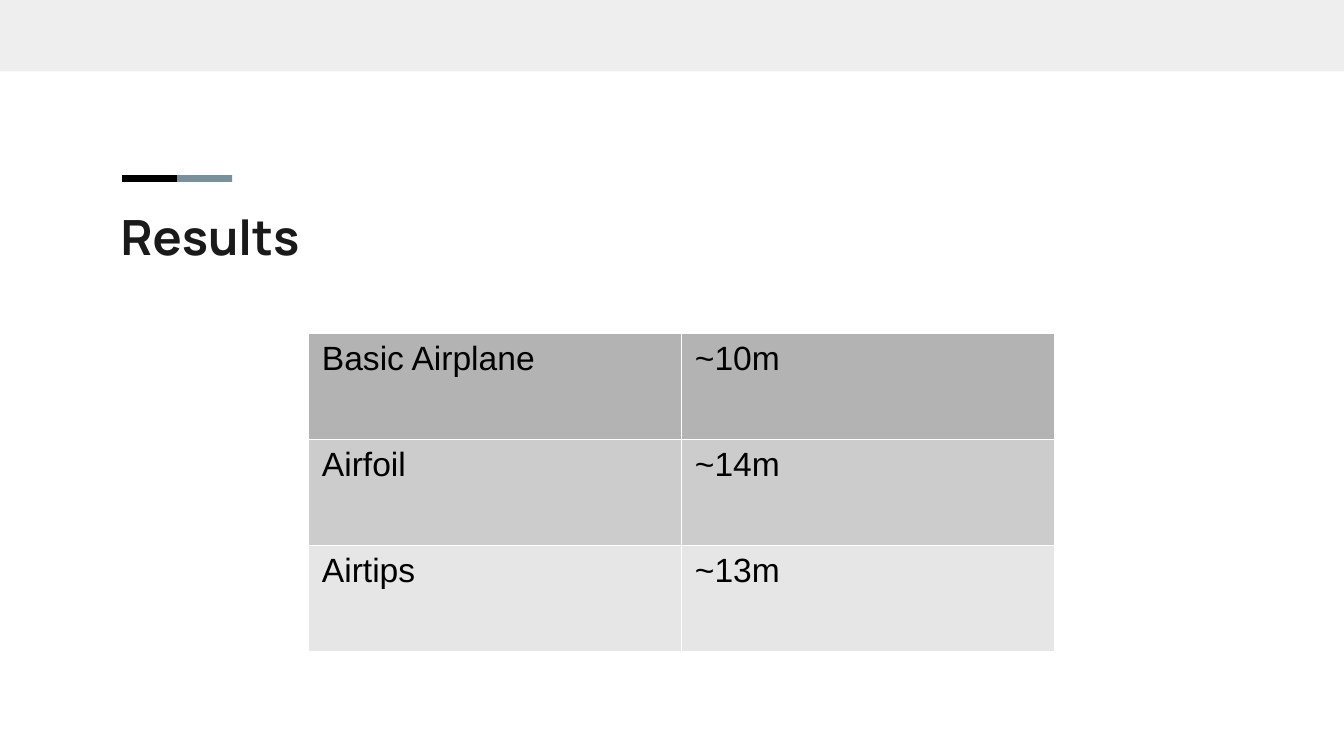
from lxml import etree
from pptx import Presentation
from pptx.dml.color import RGBColor
from pptx.enum.shapes import MSO_SHAPE
from pptx.enum.text import MSO_ANCHOR
from pptx.oxml.ns import qn
from pptx.util import Cm, Pt

RECT = MSO_SHAPE.RECTANGLE
TOP = MSO_ANCHOR.TOP

TITLE = "Results"
RESULTS = [
    ("Basic Airplane", "~10m", "B3B3B3"),
    ("Airfoil", "~14m", "CCCCCC"),
    ("Airtips", "~13m", "E6E6E6"),
]
ACCENTS = ["000000", "78909C"]

SLIDE_W, SLIDE_H = 25.4, 14.29
ACCENT_X, ACCENT_Y, ACCENT_W, ACCENT_H = 2.31, 3.31, 1.04, 0.13
COL_W, ROW_H = 7.05, 2


def rgb(color):
    return RGBColor.from_string(color)


def add_bar(s, x, y, w, h, color):
    sp = s.shapes.add_shape(RECT, Cm(x), Cm(y), Cm(w), Cm(h))
    sp.shadow.inherit = False
    sp.fill.solid()
    sp.fill.fore_color.rgb = rgb(color)
    sp.line.fill.background()


def set_font(p, name, size, color, bold=False):
    p.font.name = name
    p.font.size = Pt(size)
    p.font.color.rgb = rgb(color)
    p.font.bold = bold


def add_title(s):
    sp = s.shapes.add_textbox(Cm(2.03), Cm(3.66), Cm(21.36), Cm(1.47))
    tf = sp.text_frame
    tf.word_wrap = True
    tf.vertical_anchor = TOP
    tf.margin_left = tf.margin_right = Cm(0.25)
    tf.margin_top = tf.margin_bottom = Cm(0.25)
    p = tf.paragraphs[0]
    p.text = TITLE
    set_font(p, "Manrope", 26, "1A1A1A", True)


def set_borders(cell, color, width):
    tc_pr = cell._tc.get_or_add_tcPr()
    for i, side in enumerate(("lnL", "lnR", "lnT", "lnB")):
        ln = etree.Element(qn(f"a:{side}"), w=str(Pt(width)))
        fill = etree.SubElement(ln, qn("a:solidFill"))
        etree.SubElement(fill, qn("a:srgbClr"), val=color)
        tc_pr.insert(i, ln)


def add_results(s):
    rows, cols = len(RESULTS), 2
    table = s.shapes.add_table(
        rows, cols, Cm(5.83), Cm(6.3), Cm(cols * COL_W), Cm(rows * ROW_H)
    ).table
    for col in table.columns:
        col.width = Cm(COL_W)
    for row, (*texts, color) in zip(table.rows, RESULTS):
        row.height = Cm(ROW_H)
        for cell, text in zip(row.cells, texts):
            cell.fill.solid()
            cell.fill.fore_color.rgb = rgb(color)
            set_borders(cell, "FFFFFF", 0.06)
            p = cell.text_frame.paragraphs[0]
            p.text = text
            set_font(p, "Arial", 18, "000000")


def main():
    prs = Presentation()
    prs.slide_width, prs.slide_height = Cm(SLIDE_W), Cm(SLIDE_H)
    s = prs.slides.add_slide(prs.slide_layouts[6])
    add_bar(s, 0, 0, SLIDE_W, 1.35, "EEEEEE")
    for i, color in enumerate(ACCENTS):
        add_bar(s, ACCENT_X + i * ACCENT_W, ACCENT_Y, ACCENT_W, ACCENT_H, color)
    add_title(s)
    add_results(s)
    prs.save("out.pptx")


if __name__ == "__main__":
    main()
